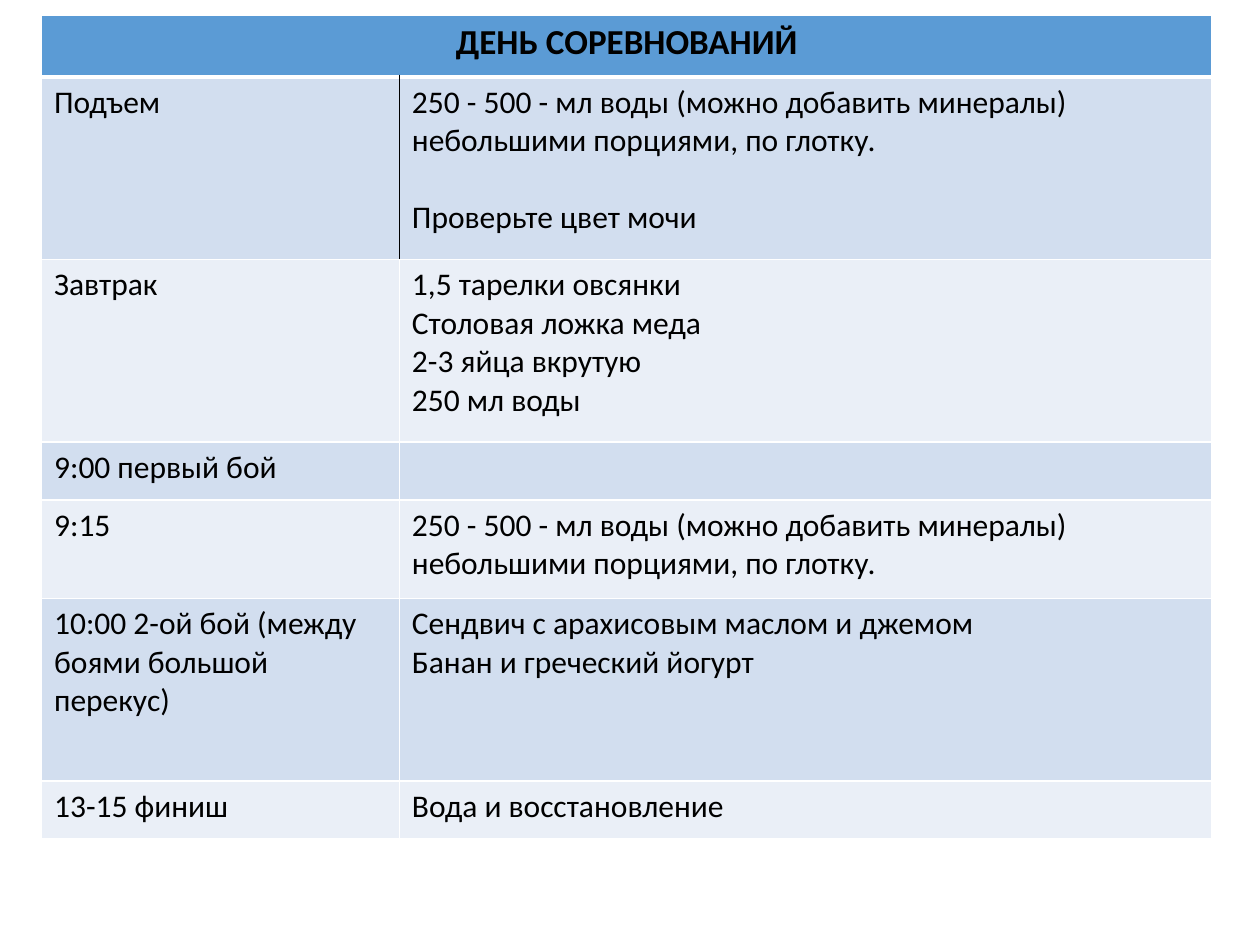
from lxml import etree
from pptx import Presentation
from pptx import util as u
from pptx.dml.color import RGBColor
from pptx.enum import text
from pptx.oxml import ns

BLACK = RGBColor(0x00, 0x00, 0x00)
WHITE = RGBColor(0xFF, 0xFF, 0xFF)
HEADER = RGBColor(0x5B, 0x9B, 0xD5)
BANDS = (RGBColor(0xD2, 0xDE, 0xEF), RGBColor(0xEA, 0xEF, 0xF7))

# Content: title, then (time, lines, row height in inches)
TITLE = "ДЕНЬ СОРЕВНОВАНИЙ"
DRINK = "250 - 500 - мл воды (можно добавить минералы) небольшими порциями, по глотку."
CHECK = "Проверьте цвет мочи"
SCHEDULE = [
    ("Подъем", [DRINK, CHECK], 1.45),
    ("Завтрак", ["1,5 тарелки овсянки", "Столовая ложка меда",
                 "2-3 яйца вкрутую", "250 мл воды"], 1.45),
    ("9:00 первый бой", [], 0.46),
    ("9:15", [DRINK], 0.78),
    ("10:00 2-ой бой (между боями большой перекус)",
     ["Сендвич с арахисовым маслом и джемом", "Банан и греческий йогурт"], 1.45),
    ("13-15 финиш", ["Вода и восстановление"], 0.46),
]
HEADER_HEIGHT = 0.49
COLUMNS = (2.84, 6.45)
LEFT, TOP = 0.33, 0.12

TITLE_FONT = {"name": "Calibri", "size": u.Pt(20), "bold": True}
BODY_FONT = {"name": "Calibri", "size": u.Pt(18), "bold": False}


def set_borders(cell, **special):
    """White 1 pt borders, except sides given as L/R/T/B=(colour, points)."""
    tc_pr = cell._tc.get_or_add_tcPr()
    for side in "LRTB":
        color, width = special.get(side, (WHITE, 1))
        ln = etree.SubElement(tc_pr, ns.qn(f"a:ln{side}"), w=str(u.Pt(width)))
        fill = etree.SubElement(ln, ns.qn("a:solidFill"))
        etree.SubElement(fill, ns.qn("a:srgbClr"), val=str(color))


def fill_cell(cell, lines, color, font, align=text.PP_ALIGN.LEFT):
    cell.fill.solid()
    cell.fill.fore_color.rgb = color
    tf = cell.text_frame
    for i, line in enumerate(lines):
        p = tf.add_paragraph() if i else tf.paragraphs[0]
        p.alignment = align
        if line == CHECK:
            p.space_before = u.Pt(22)
        r = p.add_run()
        r.text = line
        r.font.color.rgb = BLACK
        for key, value in font.items():
            setattr(r.font, key, value)


prs = Presentation()
prs.slide_width, prs.slide_height = u.Inches(10), u.Inches(7.5)
s = prs.slides.add_slide(prs.slide_layouts[6])

# Table grid
heights = [HEADER_HEIGHT] + [height for _, _, height in SCHEDULE]
table = s.shapes.add_table(len(heights), len(COLUMNS), u.Inches(LEFT), u.Inches(TOP),
                           u.Inches(sum(COLUMNS)), u.Inches(sum(heights))).table
for column, width in zip(table.columns, COLUMNS):
    column.width = u.Inches(width)
for row, height in zip(table.rows, heights):
    row.height = u.Inches(height)

# Header across both columns
table.cell(0, 0).merge(table.cell(0, 1))
for cell in table.rows[0].cells:
    set_borders(cell, B=(WHITE, 3))
fill_cell(table.cell(0, 0), [TITLE], HEADER, TITLE_FONT, text.PP_ALIGN.CENTER)

# Schedule rows, with a black divider in the first one
for i, (time, lines, _) in enumerate(SCHEDULE):
    divider = (BLACK if i == 0 else WHITE, 1)
    for j, (side, content) in enumerate((("R", [time]), ("L", lines))):
        cell = table.cell(i + 1, j)
        set_borders(cell, **{side: divider}, **({"T": (WHITE, 3)} if i == 0 else {}))
        fill_cell(cell, content, BANDS[i % 2], BODY_FONT)

prs.save("out.pptx")
